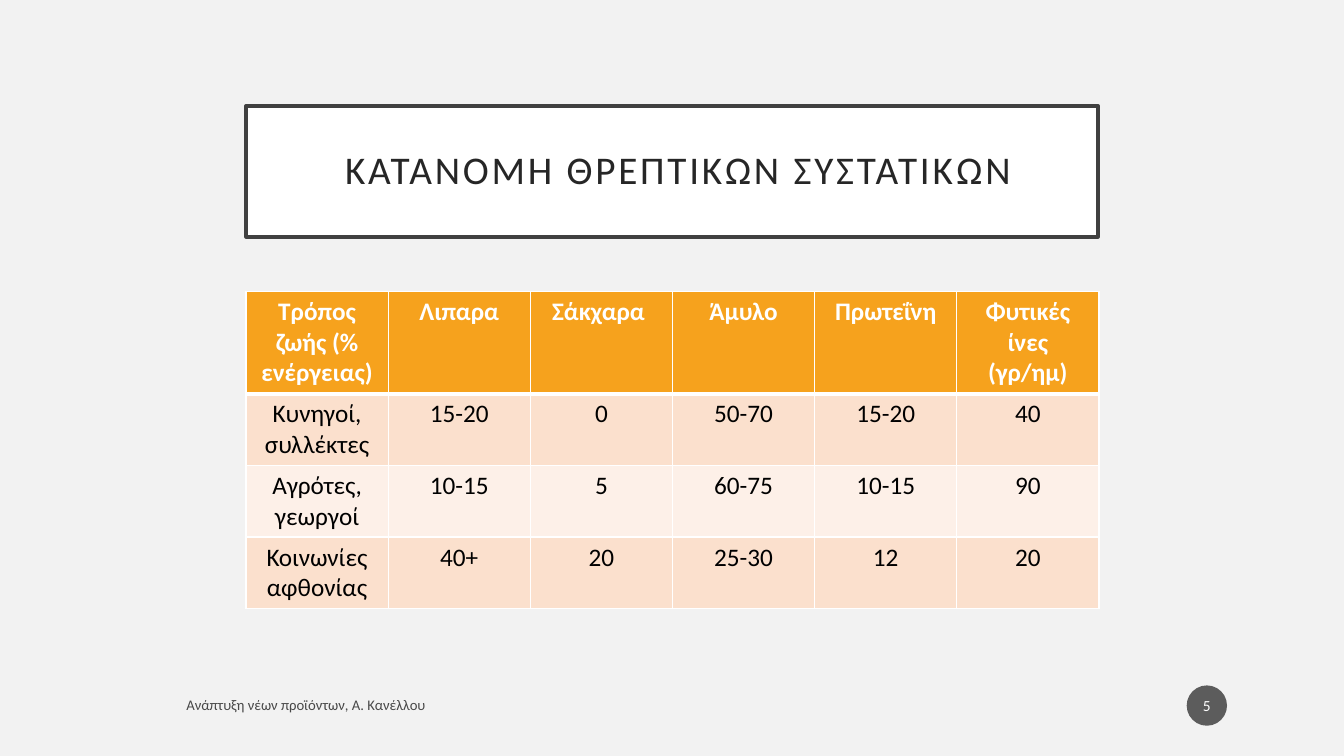
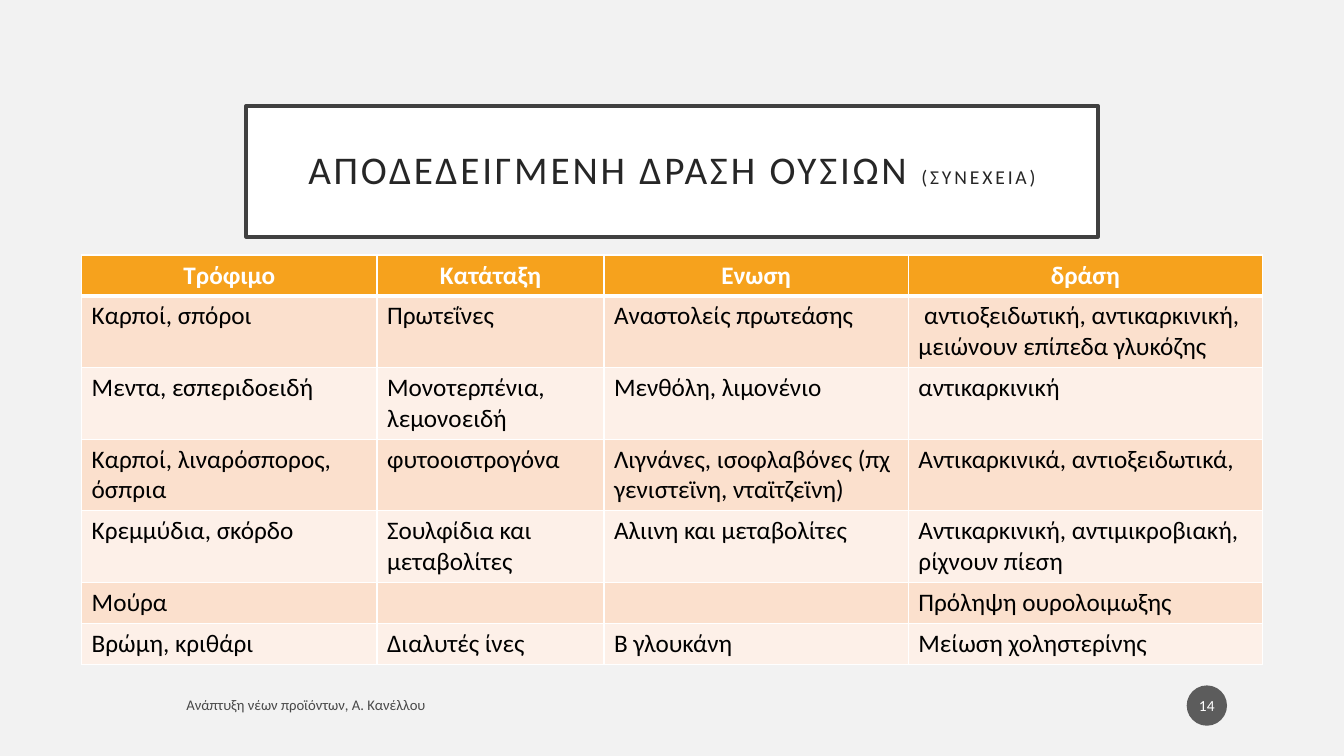
"""Build two Greek slides of nutrition tables that share one title, table and footer style."""
from dataclasses import dataclass
from typing import Any

from lxml import etree
from pptx import Presentation
from pptx.dml.color import RGBColor
from pptx.enum.lang import MSO_LANGUAGE_ID
from pptx.enum.shapes import MSO_SHAPE
from pptx.enum.text import MSO_ANCHOR, MSO_AUTO_SIZE, PP_ALIGN
from pptx.oxml.ns import qn
from pptx.util import Inches, Pt

LEFT, CENTER = PP_ALIGN.LEFT, PP_ALIGN.CENTER
MIDDLE = MSO_ANCHOR.MIDDLE
NO_AUTOFIT = MSO_AUTO_SIZE.NONE
RECTANGLE, OVAL = MSO_SHAPE.RECTANGLE, MSO_SHAPE.OVAL
GREEK = MSO_LANGUAGE_ID.GREEK
TITLE_ONLY = 5

COLORS = {
    "background": "F2F2F2",
    "white": "FFFFFF",
    "black": "000000",
    "frame": "404040",
    "title": "262626",
    "badge": "1D1D1D",
    "header": "F6A21D",
    "odd_row": "FBE0CD",
    "even_row": "FDF0E8",
}
FONT = "Calibri"
OPACITY = 70
FOOTER = "Ανάπτυξη νέων προϊόντων, Α. Κανέλλου"
TITLE_BOX = (2.44, 1.05, 8.45, 1.3)
FOOTER_BOX = (1.75, 6.82, 6.45, 0.35)
BADGE_BOX = (11.77, 6.8, 0.4, 0.4)
THIN, THICK = 1, 3
LINE_HEIGHT, CELL_PADDING = 0.305, 0.1

TITLE_FORMAT = {"size": Pt(28), "name": FONT, "language_id": GREEK}
SUBTITLE_FORMAT = {**TITLE_FORMAT, "size": Pt(14)}
HEADER_FORMAT = {"size": Pt(18), "name": FONT, "bold": True}
CELL_FORMAT = {**HEADER_FORMAT, "bold": False}
FOOTER_FORMAT = {"size": Pt(10.5), "name": FONT}
BADGE_FORMAT = {"size": Pt(11), "name": FONT}


@dataclass
class Row:
    lines: int
    cells: list[str]


@dataclass
class NutritionSlide:
    number: int
    title: str
    subtitle: str
    left: float
    top: float
    widths: list[float]
    body_align: Any
    rows: list[Row]


SLIDES = [
    NutritionSlide(
        5, " ΚΑΤΑΝΟΜΉ ΘΡΕΠΤΙΚΩΝ ΣΥΣΤΑΤΙΚΏΝ", "", 2.44, 2.89, [1.41] * 6, CENTER,
        [
            Row(3, ["Τρόπος ζωής (% ενέργειας)", "Λιπαρα", "Σάκχαρα ", "Άμυλο",
                    "Πρωτεΐνη", "Φυτικές ίνες (γρ/ημ)"]),
            Row(2, ["Κυνηγοί, συλλέκτες", "15-20", "0", "50-70", "15-20", "40"]),
            Row(2, ["Αγρότες, γεωργοί", "10-15", "5", "60-75", "10-15", "90"]),
            Row(2, ["Κοινωνίες αφθονίας", "40+", "20", "25-30", "12", "20"]),
        ],
    ),
    NutritionSlide(
        14, "ΑΠΟΔΕΔΕΙΓΜΈΝΗ ΔΡΑΣΗ ΟΥΣΙΩΝ ", "(ΣΥΝΈΧΕΙΑ)", 0.81, 2.53,
        [2.93, 2.25, 3.02, 3.51], LEFT,
        [
            Row(1, ["Τρόφιμο", "Κατάταξη", "Ενωση", "δράση"]),
            Row(2, ["Καρποί, σπόροι", "Πρωτεΐνες", "Αναστολείς πρωτεάσης",
                    " αντιοξειδωτική, αντικαρκινική, μειώνουν επίπεδα γλυκόζης"]),
            Row(2, ["Μεντα, εσπεριδοειδή", "Μονοτερπένια, λεμονοειδή",
                    "Μενθόλη, λιμονένιο", "αντικαρκινική"]),
            Row(2, ["Καρποί, λιναρόσπορος, όσπρια", "φυτοοιστρογόνα",
                    "Λιγνάνες, ισοφλαβόνες (πχ γενιστεϊνη, νταϊτζεϊνη)",
                    "Αντικαρκινικά, αντιοξειδωτικά,"]),
            Row(2, ["Κρεμμύδια, σκόρδο", "Σουλφίδια και μεταβολίτες",
                    "Αλιινη και μεταβολίτες",
                    "Αντικαρκινική, αντιμικροβιακή, ρίχνουν πίεση"]),
            Row(1, ["Μούρα", "", "", "Πρόληψη ουρολοιμωξης"]),
            Row(1, ["Βρώμη, κριθάρι", "Διαλυτές ίνες", "Β γλουκάνη",
                    "Μείωση χοληστερίνης"]),
        ],
    ),
]


def paint(fill: Any, color: str) -> None:
    fill.solid()
    fill.fore_color.rgb = RGBColor.from_string(COLORS[color])


def make_translucent(parent: Any) -> None:
    color = parent.find(qn("a:solidFill")).find(qn("a:srgbClr"))
    etree.SubElement(color, qn("a:alpha"), val=str(OPACITY * 1000))


def write(paragraph: Any, text: str, style: dict[str, Any], color: str) -> Any:
    run = paragraph.add_run()
    run.text = text
    for attribute, value in style.items():
        setattr(run.font, attribute, value)
    paint(run.font.fill, color)
    return run


def set_margins(frame: Any, horizontal: float, vertical: float) -> None:
    for side in ("left", "right"):
        setattr(frame, f"margin_{side}", Inches(horizontal))
    for side in ("top", "bottom"):
        setattr(frame, f"margin_{side}", Inches(vertical))


def add_title(slide: Any, content: NutritionSlide) -> None:
    title = slide.shapes.title
    for attribute, value in zip(("left", "top", "width", "height"), TITLE_BOX):
        setattr(title, attribute, Inches(value))
    paint(title.fill, "white")
    paint(title.line.fill, "frame")
    title.line.width = Pt(2.5)
    frame = title.text_frame
    frame.auto_size = NO_AUTOFIT
    frame.word_wrap = True
    frame.vertical_anchor = MIDDLE
    set_margins(frame, 0.2, 0.2)
    heading = frame.paragraphs[0]
    heading.alignment = CENTER
    heading.line_spacing = 0.9
    for text, style in ((content.title, TITLE_FORMAT), (content.subtitle, SUBTITLE_FORMAT)):
        if text:
            properties = write(heading, text, style, "title").font._element
            properties.set("spc", "200")
            properties.set("cap", "all")


def add_borders(cell: Any, top: int, bottom: int) -> None:
    properties = cell._tc.get_or_add_tcPr()
    for side, width in (("L", THIN), ("R", THIN), ("T", top), ("B", bottom)):
        border = etree.SubElement(properties, qn(f"a:ln{side}"), w=str(Pt(width)))
        fill = etree.SubElement(border, qn("a:solidFill"))
        etree.SubElement(fill, qn("a:srgbClr"), val=COLORS["white"])


def add_nutrition_table(slide: Any, content: NutritionSlide) -> None:
    heights = [CELL_PADDING + LINE_HEIGHT * row.lines for row in content.rows]
    table = slide.shapes.add_table(
        len(content.rows), len(content.widths), Inches(content.left), Inches(content.top),
        Inches(sum(content.widths)), Inches(sum(heights)),
    ).table
    table.horz_banding = False
    for column, width in zip(table.columns, content.widths):
        column.width = Inches(width)
    for index, (row, height) in enumerate(zip(content.rows, heights)):
        table.rows[index].height = Inches(height)
        is_header = index == 0
        band = "header" if is_header else "odd_row" if index % 2 else "even_row"
        for cell, text in zip(table.rows[index].cells, row.cells):
            add_borders(cell, THICK if index == 1 else THIN, THICK if is_header else THIN)
            paint(cell.fill, band)
            paragraph = cell.text_frame.paragraphs[0]
            paragraph.alignment = CENTER if is_header else content.body_align
            if text:
                write(paragraph, text, HEADER_FORMAT if is_header else CELL_FORMAT,
                      "white" if is_header else "black")


def add_footer(slide: Any, number: int) -> None:
    credit = slide.shapes.add_textbox(*map(Inches, FOOTER_BOX)).text_frame
    credit.word_wrap = True
    credit.vertical_anchor = MIDDLE
    run = write(credit.paragraphs[0], FOOTER, FOOTER_FORMAT, "black")
    make_translucent(run.font._element)

    badge = slide.shapes.add_shape(OVAL, *map(Inches, BADGE_BOX))
    badge.shadow.inherit = False
    badge.line.fill.background()
    paint(badge.fill, "badge")
    make_translucent(badge._element.spPr)
    frame = badge.text_frame
    frame.vertical_anchor = MIDDLE
    set_margins(frame, 0.02, 0.05)
    frame.paragraphs[0].alignment = CENTER
    write(frame.paragraphs[0], str(number), BADGE_FORMAT, "white")


def main() -> None:
    deck = Presentation()
    deck.slide_width, deck.slide_height = Inches(13.33), Inches(7.5)
    paint(deck.slide_master.background.fill, "background")
    for content in SLIDES:
        slide = deck.slides.add_slide(deck.slide_layouts[TITLE_ONLY])
        add_title(slide, content)
        add_nutrition_table(slide, content)
        add_footer(slide, content.number)
    deck.save("out.pptx")


if __name__ == "__main__":
    main()
